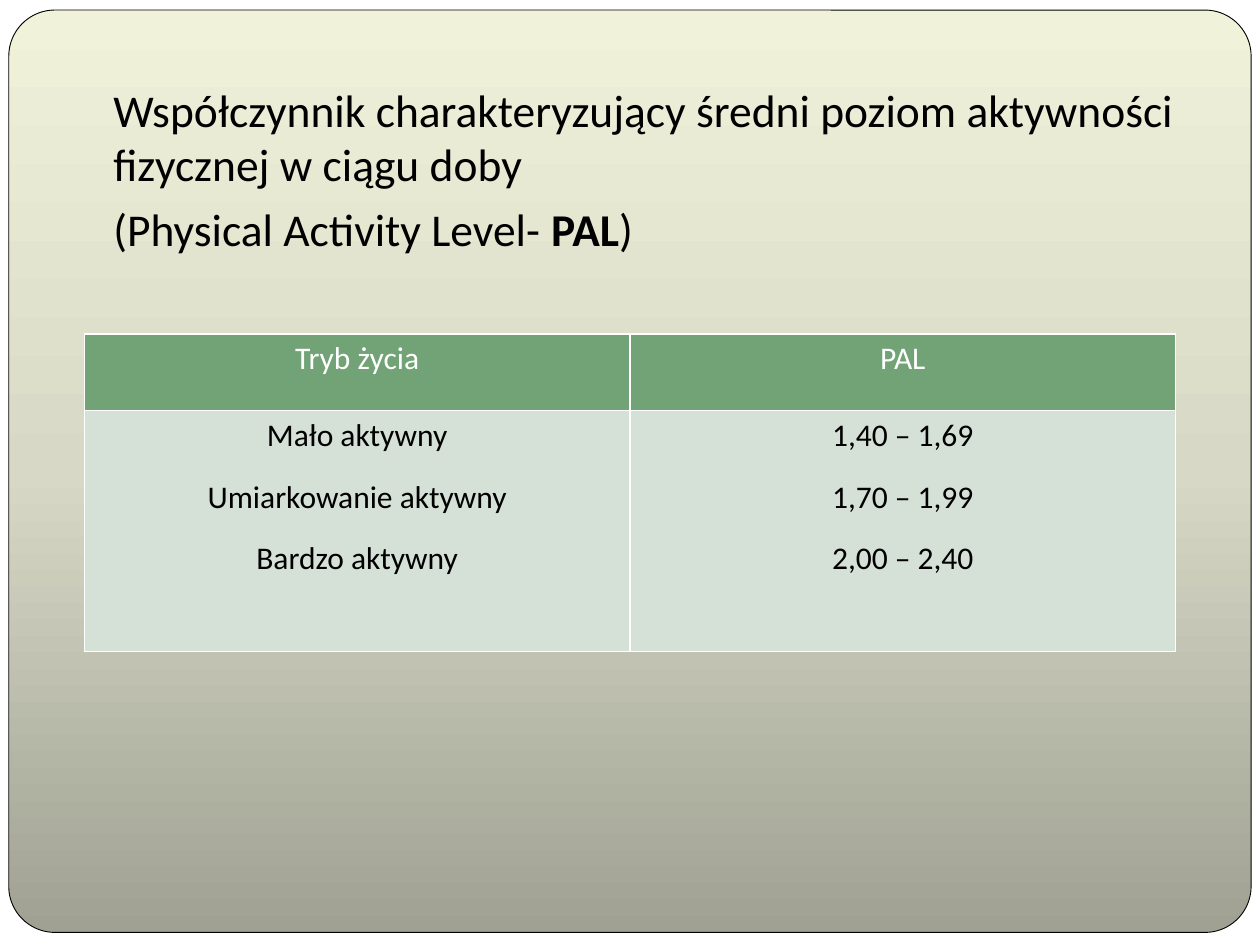
from copy import deepcopy

from lxml import etree
from pptx import Presentation
from pptx import util as u
from pptx.dml.color import RGBColor
from pptx.enum import shapes, text
from pptx.oxml.ns import qn

COLORS = {"white": "FFFFFF", "black": "000000", "header": "72A376", "body": "D5E0D6"}
GRADIENT = {0: "A0A192", 0.5: "D7D9C6", 1: "F0F2DA"}
FONT = "Calibri"
TITLE = [
    [("Współczynnik charakteryzujący średni poziom aktywności fizycznej w ciągu doby", False)],
    [("(Physical Activity Level- ", False), ("PAL", True), (")", False)],
]
TABLE = [
    [["Tryb życia"], ["PAL"]],
    [
        ["Mało aktywny", "Umiarkowanie aktywny", "Bardzo aktywny"],
        ["1,40 – 1,69", "1,70 – 1,99", "2,00 – 2,40"],
    ],
]
ROW_HEIGHTS = [0.61, 1.91]


def set_attributes(target, values):
    """Set every named attribute of the target."""
    for name, value in values.items():
        setattr(target, name, value)


def add_run(paragraph, words, size, color, bold=False):
    """Add one formatted run to a paragraph."""
    run = paragraph.add_run()
    run.text = words
    set_attributes(run.font, {"name": FONT, "size": u.Pt(size), "bold": bold})
    run.font.color.rgb = RGBColor.from_string(COLORS[color])


def list_paragraphs(frame, count):
    """Return the given number of paragraphs of a text frame."""
    return [frame.paragraphs[0]] + [frame.add_paragraph() for _ in range(count - 1)]


def add_panel(slide, box):
    """Draw the rounded panel with its three-colour gradient."""
    panel = slide.shapes.add_shape(shapes.MSO_SHAPE.ROUNDED_RECTANGLE, *map(u.Inches, box))
    panel.shadow.inherit = False
    panel.adjustments[0] = 0.05
    panel.fill.gradient()
    panel.fill.gradient_angle = 90
    stop_list = panel._element.spPr.find(".//" + qn("a:gsLst"))
    stop_list.append(deepcopy(stop_list[0]))
    for stop, (position, color) in zip(panel.fill.gradient_stops, GRADIENT.items()):
        stop.position = position
        stop.color.rgb = RGBColor.from_string(color)
    panel.line.color.rgb = RGBColor.from_string(COLORS["black"])
    panel.line.width = u.Pt(0.5)


def add_title(slide, box):
    """Write the introductory paragraphs."""
    frame = slide.shapes.add_textbox(*map(u.Inches, box)).text_frame
    set_attributes(frame, {"word_wrap": True, "margin_left": u.Inches(0.4)})
    for paragraph, runs in zip(list_paragraphs(frame, len(TITLE)), TITLE):
        paragraph.space_before = u.Pt(5.8)
        for words, bold in runs:
            add_run(paragraph, words, 26, "black", bold)


def add_borders(cell, bottom_width):
    """Give a cell white borders."""
    properties = cell._tc.get_or_add_tcPr()
    widths = {"lnL": 1, "lnR": 1, "lnT": 1, "lnB": bottom_width}
    for index, (side, width) in enumerate(widths.items()):
        line = etree.Element(qn(f"a:{side}"), w=str(u.Pt(width)))
        fill = etree.SubElement(line, qn("a:solidFill"))
        etree.SubElement(fill, qn("a:srgbClr"), val=COLORS["white"])
        properties.insert(index, line)


def fill_cell(cell, lines, fill, color):
    """Write centred lines into a coloured cell."""
    set_attributes(cell, {
        "margin_left": u.Inches(0.07), "margin_right": u.Inches(0.07),
        "margin_top": 0, "margin_bottom": 0,
    })
    cell.fill.solid()
    cell.fill.fore_color.rgb = RGBColor.from_string(COLORS[fill])
    add_borders(cell, 1)
    for paragraph, words in zip(list_paragraphs(cell.text_frame, len(lines)), lines):
        set_attributes(paragraph, {
            "alignment": text.PP_ALIGN.CENTER, "line_spacing": 1.15, "space_after": u.Pt(10),
        })
        add_run(paragraph, words, 18, color)


def add_activity_table(slide, box):
    """Place the table of lifestyles and PAL ranges."""
    table = slide.shapes.add_table(len(TABLE), len(TABLE[0]), *map(u.Inches, box)).table
    styles = [("header", "white"), ("body", "black")]
    for row, height, contents, style in zip(table.rows, ROW_HEIGHTS, TABLE, styles):
        row.height = u.Inches(height)
        for cell, lines in zip(row.cells, contents):
            fill_cell(cell, lines, *style)


def main():
    """Build and save the slide."""
    presentation = Presentation()
    width, height = 10, 7.5
    set_attributes(presentation, {"slide_width": u.Inches(width), "slide_height": u.Inches(height)})
    slide = presentation.slides.add_slide(presentation.slide_layouts[6])
    slide.background.fill.solid()
    slide.background.fill.fore_color.rgb = RGBColor.from_string(COLORS["white"])
    add_panel(slide, (0.07, 0.08, width - 0.14, 7.32))
    add_title(slide, (0.05 * width, 0.08 * height, 0.9 * width, 6.32))
    add_activity_table(slide, (0.67, 2.65, width - 1.34, sum(ROW_HEIGHTS)))
    presentation.save("out.pptx")


if __name__ == "__main__":
    main()
